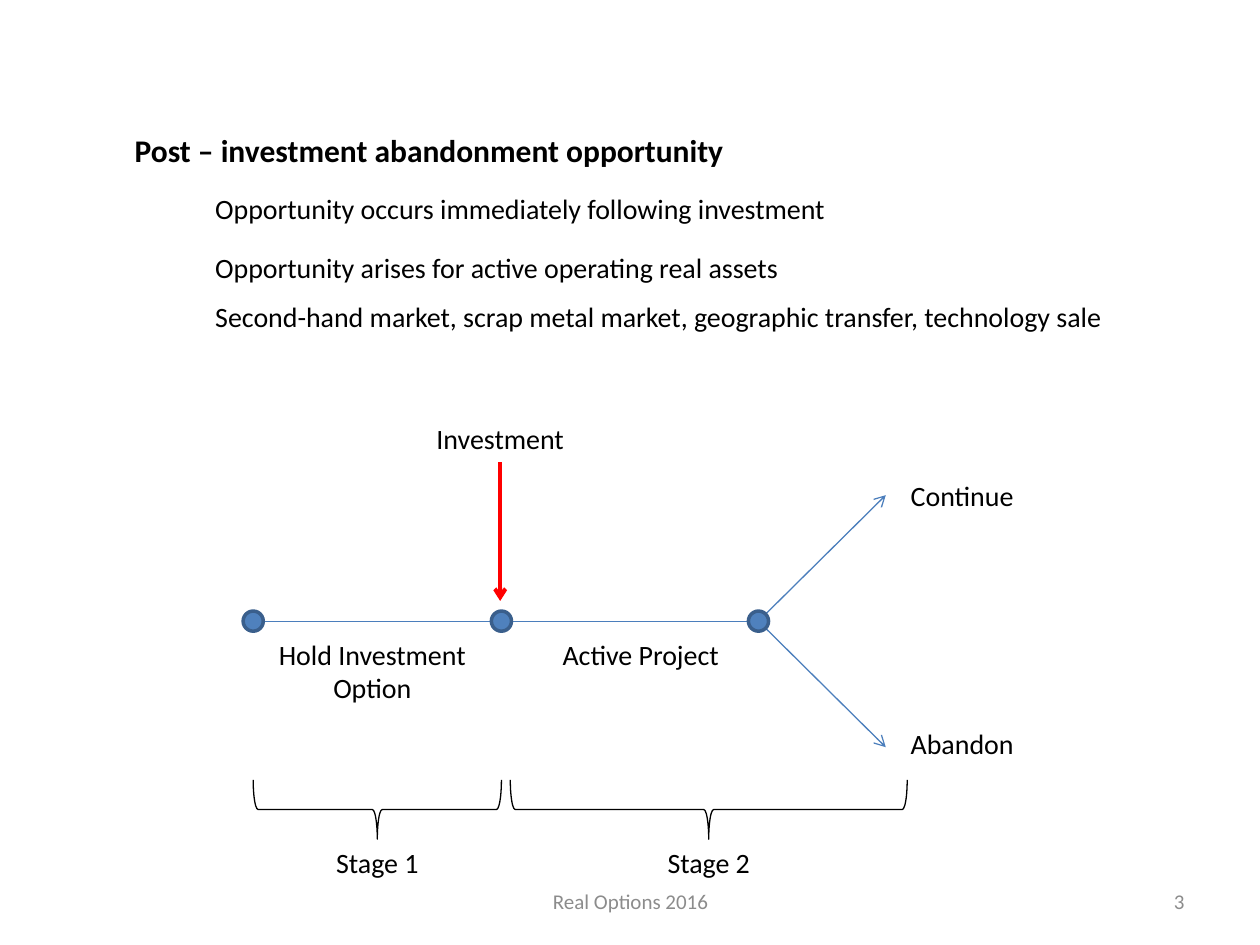
from pptx import Presentation
from pptx.dml.color import RGBColor
from pptx.enum.shapes import MSO_CONNECTOR, MSO_SHAPE
from pptx.enum.text import MSO_ANCHOR as Anchor, PP_ALIGN as Align
from pptx.oxml.ns import qn
from pptx.util import Inches, Pt
from lxml.etree import SubElement

COLORS = {"text": "000000", "footer": "8C8C8C", "path": "4B7EBC",
          "node": "4F81BD", "node_edge": "3A5F8C", "investment": "FF0000"}
FONT = "Calibri"

HEADING = "Post – investment abandonment opportunity"
POINTS = [
    ("Opportunity occurs immediately following investment", 1.47, 7.24),
    ("Opportunity arises for active operating real assets", 1.94, 7.24),
    ("Second-hand market, scrap metal market, geographic transfer, technology sale", 2.33, 7.95),
]
NODES = [2.01, 3.98, 6.02]
PHASES = [("Hold Investment Option", 1.93, 0.64), ("Active Project", 4.06, 0.37)]
OUTCOMES = [("Continue", 3.93, 3.75), ("Abandon", 5.93, 5.72)]
STAGES = [("Stage 1", 2.01, 3.98), ("Stage 2", 4.05, 7.2)]
FOOTERS = [("Real Options 2016", 3.42, 3.17, Align.CENTER), ("3", 7.17, 2.33, Align.RIGHT)]

AXIS_Y = 4.93
NODE_SIZE = 0.16
OUTCOME_X = 7.03
LABEL_WIDTH = 1.34
BRACE_TOP, BRACE_DEPTH = 6.19, 0.47

prs = Presentation()
prs.slide_width, prs.slide_height = Inches(10), Inches(7.5)
slide = prs.slides.add_slide(prs.slide_layouts[6])


def rgb(name):
    return RGBColor.from_string(COLORS[name])


def add_text(text, left, top, width, height=0.37, size=16, color="text",
             bold=False, align=Align.LEFT, anchor=Anchor.TOP):
    box = slide.shapes.add_textbox(Inches(left), Inches(top), Inches(width), Inches(height))
    frame = box.text_frame
    frame.word_wrap = True
    frame.vertical_anchor = anchor
    paragraph = frame.paragraphs[0]
    paragraph.text = text
    paragraph.alignment = align
    font = paragraph.runs[0].font
    font.name, font.size, font.bold = FONT, Pt(size), bold
    font.color.rgb = rgb(color)


def add_line(start, end, color="path", weight=0.75, arrow=False):
    line = slide.shapes.add_connector(MSO_CONNECTOR.STRAIGHT, *map(Inches, start + end))
    line.line.color.rgb = rgb(color)
    line.line.width = Pt(weight)
    if arrow:
        SubElement(line.line._get_or_add_ln(), qn("a:tailEnd"), type="arrow")
    SubElement(line._element.spPr, qn("a:effectLst"))


def add_figure(kind, center_x, center_y, width, height, edge, weight, fill=None):
    figure = slide.shapes.add_shape(kind, Inches(center_x - width / 2), Inches(center_y - height / 2),
                                    Inches(width), Inches(height))
    figure.shadow.inherit = False
    if fill:
        figure.fill.solid()
        figure.fill.fore_color.rgb = rgb(fill)
    else:
        figure.fill.background()
    figure.line.color.rgb = rgb(edge)
    figure.line.width = Pt(weight)
    return figure


add_text(HEADING, 0.97, 0.99, 7.09, 0.4, size=18, bold=True)
for point, top, width in POINTS:
    add_text(point, 1.61, top, width)

for start, end in zip(NODES, NODES[1:]):
    add_line((start - NODE_SIZE / 2, AXIS_Y), (end + NODE_SIZE / 2, AXIS_Y))
for outcome, tip_y, label_top in OUTCOMES:
    add_line((NODES[-1], AXIS_Y), (OUTCOME_X, tip_y), arrow=True)
    add_text(outcome, OUTCOME_X + 0.1, label_top, LABEL_WIDTH)
for node_x in NODES:
    add_figure(MSO_SHAPE.OVAL, node_x, AXIS_Y, NODE_SIZE, NODE_SIZE, "node_edge", 2, "node")

add_text("Investment", 3.3, 3.3, LABEL_WIDTH, align=Align.CENTER)
add_line((3.97, 3.67), (3.97, 4.77), color="investment", weight=2.25, arrow=True)

for phase, left, height in PHASES:
    add_text(phase, left, 5.01, 2.05, height, align=Align.CENTER)

for stage, start, end in STAGES:
    middle = (start + end) / 2
    brace = add_figure(MSO_SHAPE.LEFT_BRACE, middle, BRACE_TOP + BRACE_DEPTH / 2,
                       BRACE_DEPTH, end - start, "text", 0.75)
    brace.rotation = 270
    add_text(stage, middle - LABEL_WIDTH / 2, BRACE_TOP + BRACE_DEPTH, LABEL_WIDTH, align=Align.CENTER)

for footer, left, width, align in FOOTERS:
    add_text(footer, left, 6.95, width, 0.4, size=12, color="footer", align=align, anchor=Anchor.MIDDLE)

prs.save("out.pptx")
